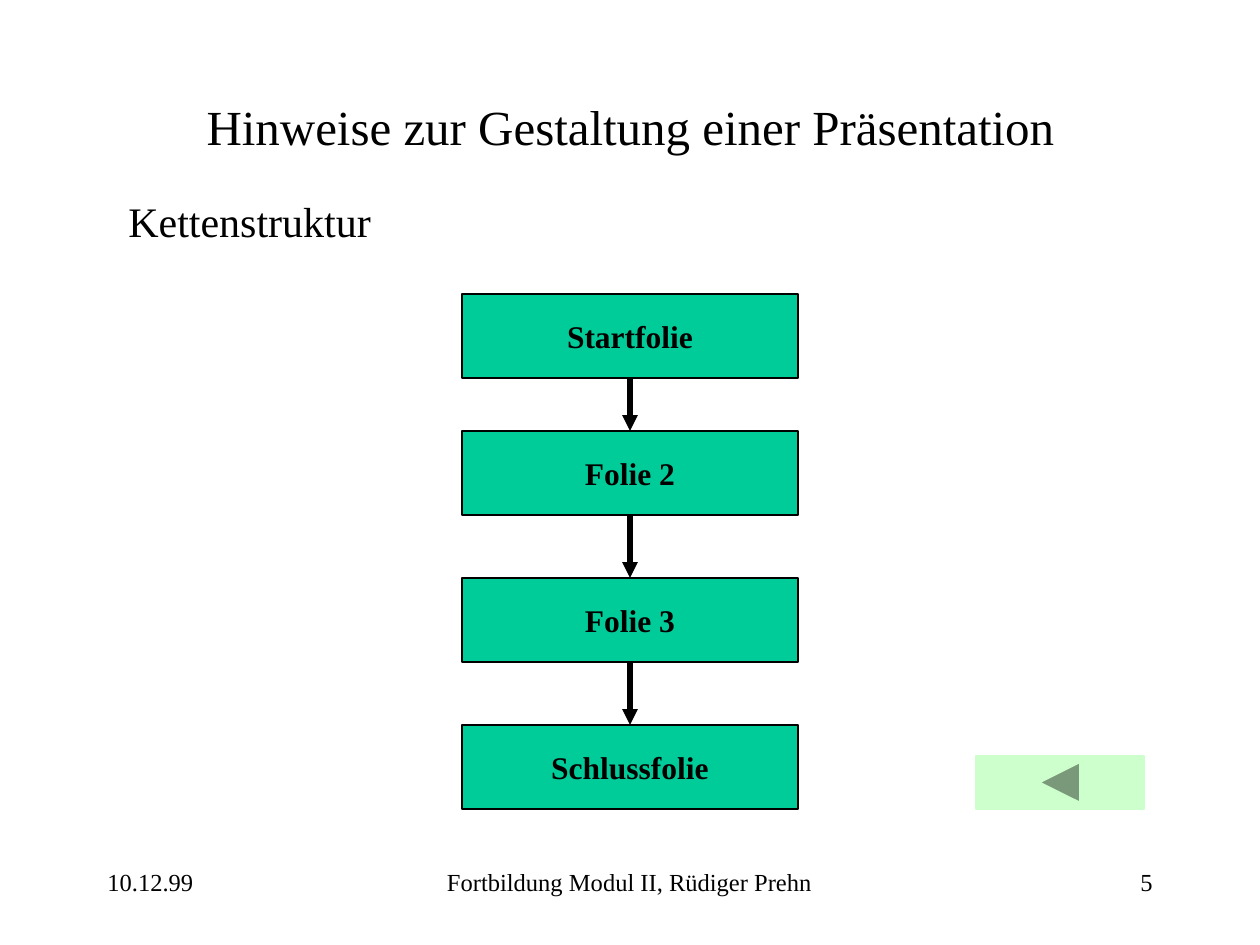
from lxml import etree
from pptx import Presentation
from pptx.dml.color import RGBColor
from pptx.enum.shapes import MSO_CONNECTOR, MSO_SHAPE
from pptx.enum.text import MSO_ANCHOR, PP_ALIGN
from pptx.oxml.ns import qn
from pptx.util import Pt

PX = 914400 / 126
FONT = "Times New Roman"
BLACK = RGBColor(0x00, 0x00, 0x00)
GREEN = RGBColor(0x00, 0xCC, 0x99)
PALE_GREEN = RGBColor(0xCC, 0xFF, 0xCC)
LEFT, CENTER, RIGHT = PP_ALIGN.LEFT, PP_ALIGN.CENTER, PP_ALIGN.RIGHT
TOP, MIDDLE = MSO_ANCHOR.TOP, MSO_ANCHOR.MIDDLE
RECT, BACK = MSO_SHAPE.RECTANGLE, MSO_SHAPE.ACTION_BUTTON_BACK_OR_PREVIOUS
STRAIGHT = MSO_CONNECTOR.STRAIGHT


def px(*values):
    return [round(v * PX) for v in values]


def set_text(sp, text, size, align=LEFT, anchor=TOP, bold=False, wrap=True):
    tf = sp.text_frame
    tf.word_wrap = wrap
    tf.vertical_anchor = anchor
    tf.text = text
    p = tf.paragraphs[0]
    p.alignment = align
    font = p.runs[0].font
    font.name, font.size, font.bold = FONT, Pt(size), bold
    font.color.rgb = BLACK


def add_text(s, box, text, size, align=LEFT):
    set_text(s.shapes.add_textbox(*px(*box)), text, size, align)


def add_filled(s, kind, box, fill, line):
    sp = s.shapes.add_shape(kind, *px(*box))
    sp.shadow.inherit = False
    sp.fill.solid()
    sp.fill.fore_color.rgb = fill
    sp.line.color.rgb = line
    sp.line.width = Pt(0.75)
    return sp


def add_arrow(s, start, end):
    c = s.shapes.add_connector(STRAIGHT, 0, 0, 0, 0)
    c.begin_connect(start, 2)
    c.end_connect(end, 0)
    c.line.color.rgb = BLACK
    c.line.width = Pt(3)
    etree.SubElement(c.line._get_or_add_ln(), qn("a:tailEnd"), type="triangle")
    etree.SubElement(c._element.spPr, qn("a:effectLst"))


def add_title(s, box):
    title = s.shapes.title
    title.left, title.top, title.width, title.height = px(*box)
    set_text(title, "Hinweise zur Gestaltung einer Präsentation", 28, CENTER, MIDDLE)


def add_chain(s, box, steps):
    x, y, w, h = box
    boxes = []
    for offset, label in steps:
        sp = add_filled(s, RECT, (x, y + offset, w, h), GREEN, BLACK)
        set_text(sp, label, 18, CENTER, MIDDLE, bold=True, wrap=False)
        boxes.append(sp)
    for start, end in zip(boxes, boxes[1:]):
        add_arrow(s, start, end)


def add_footer(s, box):
    x, y, w, h = box
    side, middle = 262, 399
    add_text(s, (x, y, side, h), "10.12.99", 14)
    add_text(s, (x + (w - middle) // 2, y, middle, h),
             "Fortbildung Modul II, Rüdiger Prehn", 14, CENTER)
    add_text(s, (x + w - side, y, side, h), "5", 14, RIGHT)


def main():
    prs = Presentation()
    prs.slide_width, prs.slide_height = px(1260, 945)
    s = prs.slides.add_slide(prs.slide_layouts[5])
    add_footer(s, (95, 861, 1070, 63))
    add_title(s, (95, 84, 1071, 84))
    add_text(s, (116, 189, 1029, 63), "Kettenstruktur", 24)
    add_chain(s, (462, 294, 336, 84), [
        (0, "Startfolie"), (137, "Folie 2"), (284, "Folie 3"), (431, "Schlussfolie")])
    add_filled(s, BACK, (976, 756, 168, 53), PALE_GREEN, PALE_GREEN)
    prs.save("out.pptx")


if __name__ == "__main__":
    main()
